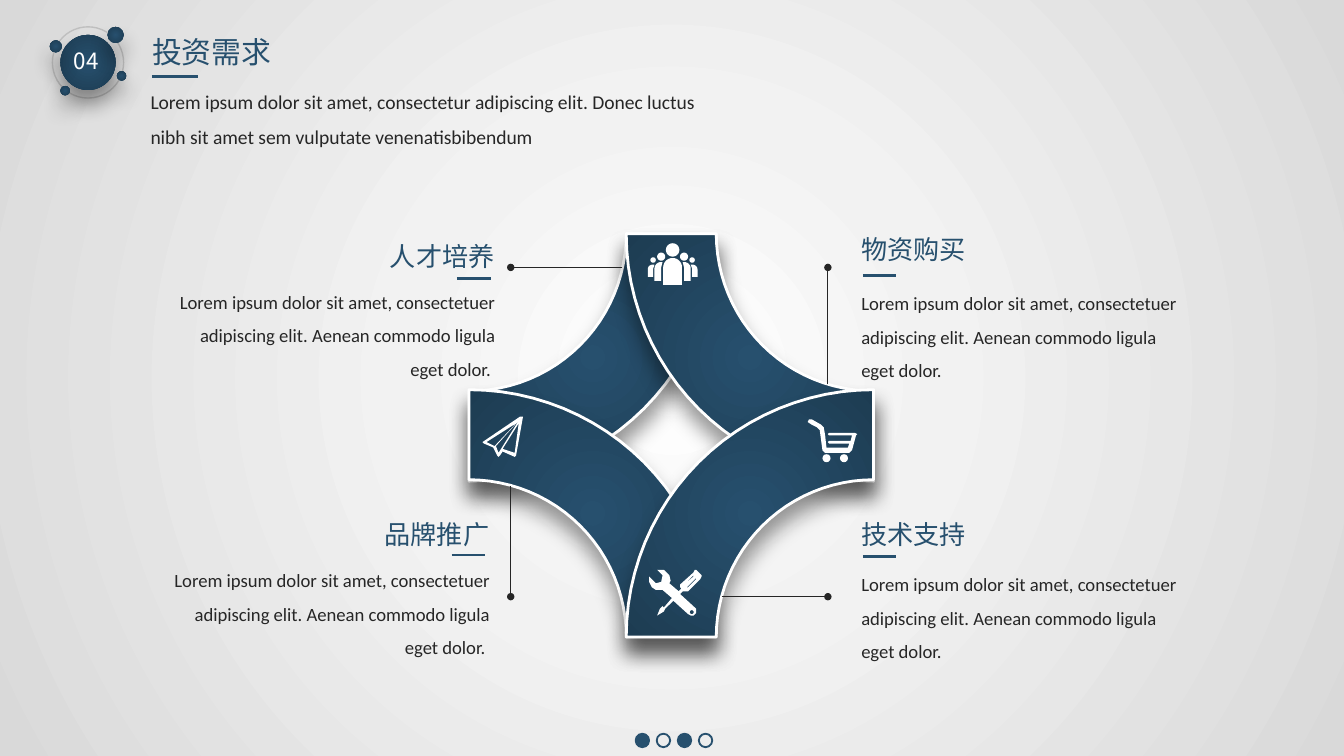
from math import cos, pi, sin

from lxml.etree import SubElement
from pptx import Presentation
from pptx.dml.color import RGBColor
from pptx.enum.shapes import MSO_CONNECTOR as CONNECTOR, MSO_SHAPE as SHAPE
from pptx.enum.text import MSO_ANCHOR as ANCHOR, MSO_AUTO_SIZE as AUTO_SIZE, PP_ALIGN as ALIGN
from pptx.oxml import parse_xml
from pptx.oxml.ns import nsdecls, qn
from pptx.util import Inches, Pt

NAVY = RGBColor(0x27, 0x50, 0x6E)
DEEP_NAVY = RGBColor(0x1D, 0x3C, 0x52)
INK = RGBColor(0x26, 0x26, 0x26)
RING_GRAY = RGBColor(0xBF, 0xBF, 0xBF)
PALE_GRAY = RGBColor(0xF2, 0xF2, 0xF2)
EDGE_GRAY = RGBColor(0xD9, 0xD9, 0xD9)
WHITE = RGBColor(0xFF, 0xFF, 0xFF)
NAVY_STOPS = [(0, NAVY), (100, DEEP_NAVY)]
LATIN, CHINESE = "Calibri", "Noto Sans CJK SC"

INTRO = ("Lorem ipsum dolor sit amet, consectetur adipiscing elit. Donec luctus "
         "nibh sit amet sem vulputate venenatisbibendum")
DETAIL = ("Lorem ipsum dolor sit amet, consectetuer adipiscing elit. "
          "Aenean commodo ligula eget dolor.")


def arc(x, y, radius, start, end, steps=24):
    """Points on an arc, angles in degrees clockwise from the right."""
    angles = [(start + (end - start) * i / steps) * pi / 180 for i in range(steps + 1)]
    return [(x + radius * cos(a), y + radius * sin(a)) for a in angles]


def radial_gradient(parent, stops):
    """Swap the solid fill of parent for a gradient from the centre."""
    stop_xml = "".join(f'<a:gs pos="{position * 1000}"><a:srgbClr val="{color}"/></a:gs>'
                       for position, color in stops)
    gradient = parse_xml(
        f'<a:gradFill {nsdecls("a")} rotWithShape="1"><a:gsLst>{stop_xml}</a:gsLst>'
        '<a:path path="circle"><a:fillToRect l="50000" t="50000" r="50000" b="50000"/>'
        '</a:path></a:gradFill>')
    parent.replace(parent.find(qn("a:solidFill")), gradient)


class SlideBuilder:
    def __init__(self, slide):
        self.slide = slide
        self.shapes = slide.shapes

    def background(self, stops):
        self.slide.background.fill.solid()
        radial_gradient(self.slide._element.find(".//" + qn("p:bgPr")), stops)

    def style(self, shape, fill=None, line=None, width=1, raised=False):
        shape.shadow.inherit = False
        if fill is None and not raised:
            shape.fill.background()
        else:
            shape.fill.solid()
            shape.fill.fore_color.rgb = fill or NAVY
        if line is None:
            shape.line.fill.background()
        else:
            shape.line.color.rgb = line
            shape.line.width = Pt(width)
        if raised:
            properties = shape._element.spPr
            radial_gradient(properties, NAVY_STOPS)
            properties.find(qn("a:effectLst")).append(parse_xml(
                f'<a:outerShdw {nsdecls("a")} blurRad="{Pt(11)}" dist="{Pt(8)}" '
                'dir="5400000" algn="t" rotWithShape="0"><a:srgbClr val="000000">'
                '<a:alpha val="40000"/></a:srgbClr></a:outerShdw>'))

    def circle(self, shapes, left, top, size, **style):
        shape = shapes.add_shape(SHAPE.OVAL, Inches(left), Inches(top), Inches(size), Inches(size))
        self.style(shape, **style)

    def outline(self, shapes, contours, **style):
        contours = [[(Inches(x), Inches(y)) for x, y in contour] for contour in contours]
        builder = shapes.build_freeform(*contours[0][0])
        for number, contour in enumerate(contours):
            if number:
                builder.move_to(*contour[0])
            builder.add_line_segments(contour[1:], close=True)
        self.style(builder.convert_to_shape(), **style)

    def line(self, x1, y1, x2, y2, color=NAVY, width=1.5, dot=False):
        connector = self.shapes.add_connector(
            CONNECTOR.STRAIGHT, Inches(x1), Inches(y1), Inches(x2), Inches(y2))
        connector.line.color.rgb = color
        connector.line.width = Pt(width)
        if dot:
            SubElement(connector.line._get_or_add_ln(), qn("a:tailEnd"),
                       type="oval", w="sm", len="sm")
        SubElement(connector._element.spPr, qn("a:effectLst"))

    def text(self, text, left, top, width, height, size, font, color,
             align=ALIGN.LEFT, spacing=1.0, wrap=False, placeholder=None):
        shape = placeholder or self.shapes.add_textbox(0, 0, 0, 0)
        shape.left, shape.top = Inches(left), Inches(top)
        shape.width, shape.height = Inches(width), Inches(height)
        frame = shape.text_frame
        frame.text = text
        frame.word_wrap = wrap
        frame.auto_size = AUTO_SIZE.SHAPE_TO_FIT_TEXT
        frame.vertical_anchor = ANCHOR.TOP
        paragraph = frame.paragraphs[0]
        paragraph.alignment = align
        paragraph.line_spacing = spacing
        paragraph.space_before = Pt(0)
        if placeholder:
            properties = paragraph._p.get_or_add_pPr()
            properties.set("marL", "0")
            properties.set("indent", "0")
            SubElement(properties, qn("a:buNone"))
        run = paragraph.runs[0]
        run.font.size, run.font.name = Pt(size), font
        run.font.color.rgb = color
        SubElement(run._r.get_or_add_rPr(), qn("a:ea"), typeface=font)

    def topic(self, heading, edge, heading_top, detail_top, rule_top, right):
        """Heading, short rule and detail, aligned to one vertical edge."""
        align = ALIGN.RIGHT if right else ALIGN.LEFT
        shift = 1 if right else 0
        self.text(DETAIL + " " * shift, edge - 2.59 * shift, detail_top, 2.59, 0.85,
                  10, LATIN, INK, align, 1.5, wrap=True)
        self.text(heading, edge - 0.98 * shift, heading_top, 0.98, 0.33,
                  14, CHINESE, NAVY, align)
        rule_left = edge - 0.38 if right else edge + 0.11
        self.line(rule_left, rule_top, rule_left + 0.25, rule_top)


presentation = Presentation()
presentation.slide_width, presentation.slide_height = Inches(10), Inches(10 * 9 / 16)
slide = presentation.slides.add_slide(presentation.slide_layouts[1])
builder = SlideBuilder(slide)
builder.background([(0, WHITE), (35, PALE_GRAY), (100, EDGE_GRAY)])

# Number badge
badge = slide.shapes.add_group_shape().shapes
builder.circle(badge, 0.39, 0.2, 0.53, line=RING_GRAY, width=0.75)
for left, top, size in [(0.45, 0.26, 0.41), (0.8, 0.2, 0.12), (0.37, 0.3, 0.09),
                        (0.45, 0.64, 0.07), (0.87, 0.53, 0.07)]:
    builder.circle(badge, left, top, size, raised=True)
builder.text("04", 0.45, 0.3, 0.42, 0.3, 12, CHINESE, WHITE)

# Page dots
dots = slide.shapes.add_group_shape().shapes
for number in range(4):
    builder.circle(dots, 4.73 + 0.47 * number / 3, 5.46, 0.1,
                   fill=None if number % 2 else NAVY, line=NAVY)

# Title and introduction
builder.text("投资需求", 1.03, 0.2, 1.09, 0.37, 16, CHINESE, NAVY, ALIGN.CENTER,
             placeholder=slide.shapes.title)
builder.text(INTRO, 1.02, 0.53, 4.47, 0.62, 10.5, LATIN, INK, spacing=1.5, wrap=True,
             placeholder=slide.placeholders[1])
builder.line(1.13, 0.57, 1.47, 0.57)

# Four quarter rings, each centred on a corner of the diagram
for x, y, start in [(3.49, 1.74, 0), (3.49, 4.74, 270), (6.5, 1.74, 90), (6.5, 4.74, 180)]:
    ring = arc(x, y, 1.84, start, start + 90) + arc(x, y, 1.17, start + 90, start)
    builder.outline(slide.shapes, [ring], raised=True, line=WHITE, width=1.5)

# Leader lines
for ends in [(4.63, 1.99, 3.8, 1.99), (3.8, 3.62, 3.8, 4.44),
             (5.37, 4.44, 6.16, 4.44), (6.16, 2.86, 6.16, 1.99)]:
    builder.line(*ends, color=INK, width=0.5, dot=True)

# Topics
builder.topic("人才培养", 3.78, 1.74, 2.03, 2.07, True)
builder.topic("物资购买", 6.31, 1.69, 2.04, 2.05, False)
builder.topic("品牌推广", 3.74, 3.81, 4.1, 4.13, True)
builder.topic("技术支持", 6.31, 3.81, 4.13, 4.14, False)

# People icon, mirrored about its middle
MIDDLE = 5.005
people = [arc(MIDDLE, 1.86, 0.05, 0, 360),
          [(MIDDLE - 0.07, 2.12)] + arc(MIDDLE, 1.99, 0.07, 180, 360) + [(MIDDLE + 0.07, 2.12)]]
right_side = [
    arc(5.09, 1.91, 0.03, 0, 360),
    arc(5.15, 1.935, 0.02, 0, 360),
    [(5.09, 2.09), (5.09, 1.99), (5.08, 1.95)] + arc(5.09, 2, 0.05, 270, 360) + [(5.14, 2.09)],
    [(5.15, 2.06), (5.15, 2), (5.14, 1.97)] + arc(5.155, 2.005, 0.035, 270, 360) + [(5.19, 2.06)],
]
left_side = [[(2 * MIDDLE - x, y) for x, y in contour] for contour in right_side]
builder.outline(slide.shapes, people + right_side + left_side, fill=WHITE)

# Cart icon
cart = slide.shapes.add_group_shape().shapes
for left in (6.12, 6.25):
    builder.circle(cart, left, 3.38, 0.06, fill=WHITE)
builder.outline(cart, [[
    (6.36, 3.22), (6.17, 3.22), (6.16, 3.23), (6.17, 3.24), (6.34, 3.24), (6.33, 3.28),
    (6.17, 3.28), (6.16, 3.29), (6.17, 3.3), (6.32, 3.3), (6.31, 3.33), (6.15, 3.33),
    (6.14, 3.24), (6.13, 3.18), (6.11, 3.16), (6.04, 3.12), (6.02, 3.12), (6.01, 3.14),
    (6.04, 3.16), (6.08, 3.18), (6.1, 3.2), (6.12, 3.35), (6.14, 3.37), (6.32, 3.37),
    (6.34, 3.35), (6.37, 3.24), (6.38, 3.23)]], fill=WHITE)

# Paper plane icon
builder.outline(slide.shapes, [
    [(3.89, 3.1), (3.87, 3.1), (3.59, 3.29), (3.6, 3.3), (3.67, 3.33), (3.7, 3.39),
     (3.71, 3.4), (3.72, 3.39), (3.74, 3.36), (3.83, 3.4), (3.84, 3.39), (3.89, 3.11)],
    [(3.83, 3.37), (3.74, 3.34), (3.86, 3.15)],
    [(3.69, 3.32), (3.86, 3.13), (3.71, 3.37)],
    [(3.62, 3.29), (3.84, 3.15), (3.68, 3.32)]], fill=WHITE)

# Tools icon
builder.outline(slide.shapes, [
    [(5.22, 4.28), (5.18, 4.24), (5.17, 4.24), (5.16, 4.26), (5.06, 4.35), (5.06, 4.37),
     (5.07, 4.38), (5.05, 4.4), (4.98, 4.34), (4.99, 4.32), (4.98, 4.28), (4.96, 4.26),
     (4.94, 4.24), (4.91, 4.24), (4.89, 4.24), (4.93, 4.28), (4.92, 4.33), (4.88, 4.34),
     (4.83, 4.29), (4.83, 4.33), (4.85, 4.37), (4.88, 4.39), (4.93, 4.39), (5, 4.45),
     (4.94, 4.52), (4.93, 4.51), (4.91, 4.53), (4.89, 4.58), (4.94, 4.55), (4.95, 4.53),
     (5.01, 4.47), (5.12, 4.57), (5.14, 4.58), (5.16, 4.58), (5.18, 4.56), (5.18, 4.53),
     (5.06, 4.42), (5.08, 4.4), (5.12, 4.4), (5.21, 4.31), (5.22, 4.29)],
    arc(5.147, 4.555, 0.015, 0, 360),
    [(5.09, 4.35), (5.16, 4.28), (5.16, 4.29)],
    [(5.12, 4.37), (5.11, 4.37), (5.18, 4.3), (5.18, 4.31)]], fill=WHITE)

presentation.save("out.pptx")
